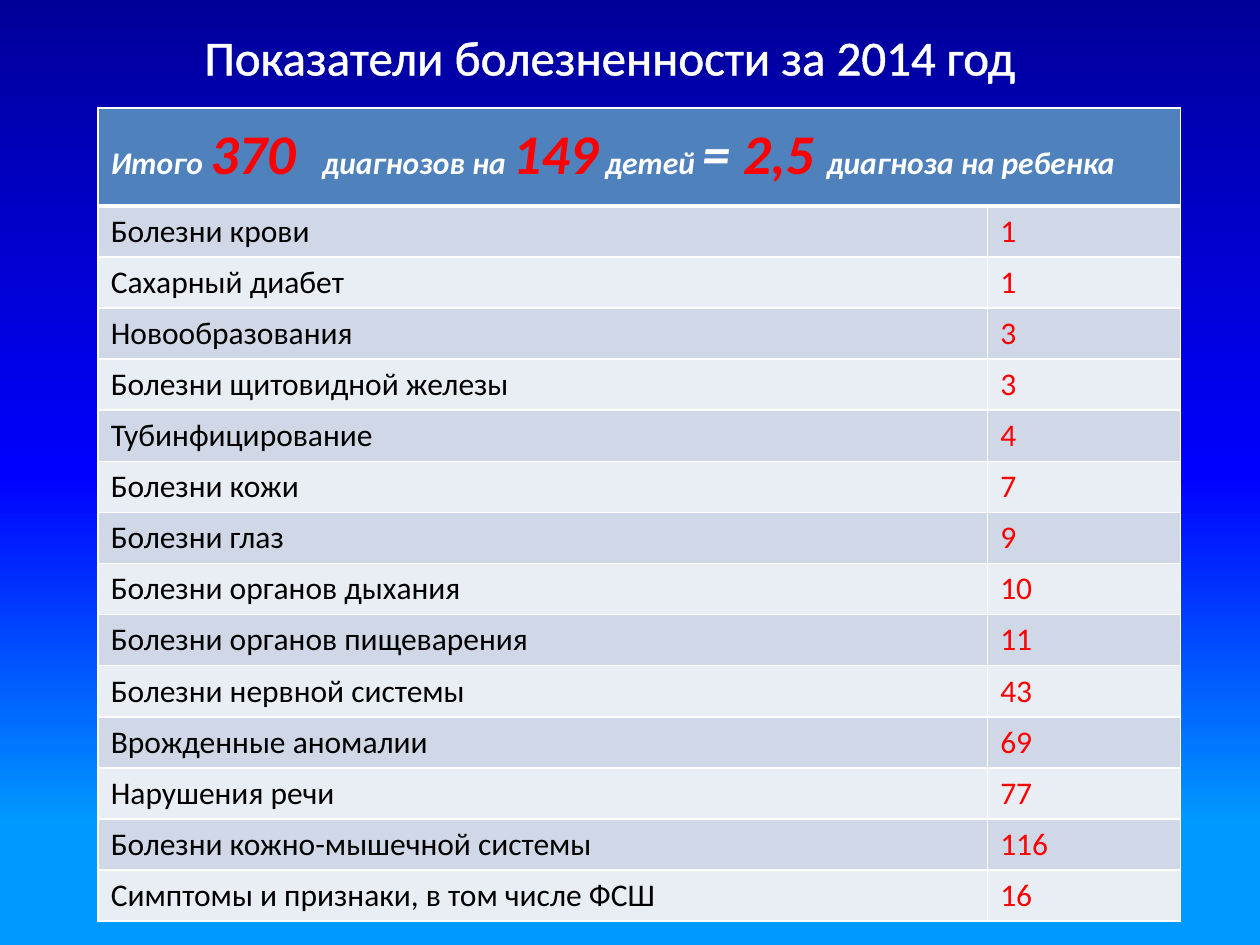
from lxml.etree import SubElement
from pptx import Presentation
from pptx.dml.color import RGBColor
from pptx.enum.text import MSO_AUTO_SIZE, PP_ALIGN
from pptx.oxml import parse_xml
from pptx.oxml.ns import nsdecls, qn
from pptx.util import Cm, Pt

WHITE = RGBColor(0xFF, 0xFF, 0xFF)
BLACK = RGBColor(0, 0, 0)
RED = RGBColor(0xFF, 0, 0)
BLUE = RGBColor(0x4F, 0x81, 0xBD)
BANDS = (RGBColor(0xD0, 0xD8, 0xE8), RGBColor(0xE9, 0xED, 0xF4))
NAVY = RGBColor(0, 0, 0x99)
DEEP = RGBColor(0, 0, 0xFF)
SKY = RGBColor(0, 0x99, 0xFF)

TOTAL = [
    ("Итого ", 18, WHITE), ("370 ", 32, RED), (" ", 36, WHITE),
    ("диагнозов на ", 18, WHITE), ("149", 32, RED),
    (" детей ", 18, WHITE), ("= ", 32, WHITE), ("2,5 ", 32, RED),
    ("диагноза на ребенка", 18, WHITE),
]
CASES = [
    ("Болезни крови", 1),
    ("Сахарный диабет", 1),
    ("Новообразования", 3),
    ("Болезни щитовидной железы", 3),
    ("Тубинфицирование", 4),
    ("Болезни кожи", 7),
    ("Болезни глаз", 9),
    ("Болезни органов дыхания", 10),
    ("Болезни органов пищеварения", 11),
    ("Болезни нервной системы", 43),
    ("Врожденные аномалии", 69),
    ("Нарушения речи", 77),
    ("Болезни кожно-мышечной системы", 116),
    ("Симптомы и признаки, в том числе ФСШ", 16),
]


def add_run(para, text, size, color, strong=False):
    run = para.add_run()
    run.text = text
    font = run.font
    font.name, font.size = "Calibri", Pt(size)
    font.bold = font.italic = strong
    font.color.rgb = color
    return run


def set_back(slide):
    stops = "".join(
        f'<a:gs pos="{pos * 1000}"><a:srgbClr val="{color}"/></a:gs>'
        for pos, color in ((0, NAVY), (50, DEEP), (87, SKY)))
    back = parse_xml(
        f'<p:bg {nsdecls("p", "a")}><p:bgPr><a:gradFill>'
        f'<a:gsLst>{stops}</a:gsLst><a:lin ang="5400000" scaled="0"/>'
        '</a:gradFill><a:effectLst/></p:bgPr></p:bg>')
    slide._element.cSld.insert(0, back)


def add_title(slide, text):
    box = slide.shapes.add_textbox(Cm(0.58), Cm(0.41), Cm(23.42), Cm(1.45))
    frame = box.text_frame
    frame.word_wrap = True
    frame.auto_size = MSO_AUTO_SIZE.SHAPE_TO_FIT_TEXT
    para = frame.paragraphs[0]
    para.alignment = PP_ALIGN.CENTER
    run = add_run(para, text, 28, WHITE)
    # White outline around the letters
    line = parse_xml(
        f'<a:ln {nsdecls("a")} w="{Pt(1.45)}"><a:solidFill>'
        f'<a:srgbClr val="{WHITE}"/></a:solidFill></a:ln>')
    run.font._element.insert(0, line)


def style_cell(cell, fill, base=1):
    props = cell._tc.get_or_add_tcPr()
    for side, width in (("L", 1), ("R", 1), ("T", 1), ("B", base)):
        line = SubElement(props, qn(f"a:ln{side}"), w=str(Pt(width)))
        solid = SubElement(line, qn("a:solidFill"))
        SubElement(solid, qn("a:srgbClr"), val=str(WHITE))
    cell.fill.solid()
    cell.fill.fore_color.rgb = fill


def add_grid(slide):
    count = len(CASES) + 1
    grid = slide.shapes.add_table(
        count, 2, Cm(1.98), Cm(2.18), Cm(21.82), Cm(16.41)).table
    for col, width in zip(grid.columns, (17.93, 3.89)):
        col.width = Cm(width)
    for num, row in enumerate(grid.rows):
        row.height = Cm(1.03 if num else 1.97)

    # Header with the totals
    head = grid.cell(0, 0)
    head.merge(grid.cell(0, 1))
    for cell in grid.rows[0].cells:
        style_cell(cell, BLUE, 3)
    for text, size, color in TOTAL:
        add_run(head.text_frame.paragraphs[0], text, size, color, True)

    # Banded rows of diagnoses
    for num, (name, value) in enumerate(CASES):
        pairs = ((name, BLACK), (str(value), RED))
        for cell, (text, color) in zip(grid.rows[num + 1].cells, pairs):
            style_cell(cell, BANDS[num % 2], 1)
            add_run(cell.text_frame.paragraphs[0], text, 18, color)


def main():
    deck = Presentation()
    deck.slide_width, deck.slide_height = Cm(25.4), Cm(19.05)
    slide = deck.slides.add_slide(deck.slide_layouts[6])
    set_back(slide)
    add_title(slide, "Показатели болезненности за 2014 год")
    add_grid(slide)
    deck.save("out.pptx")


if __name__ == "__main__":
    main()
